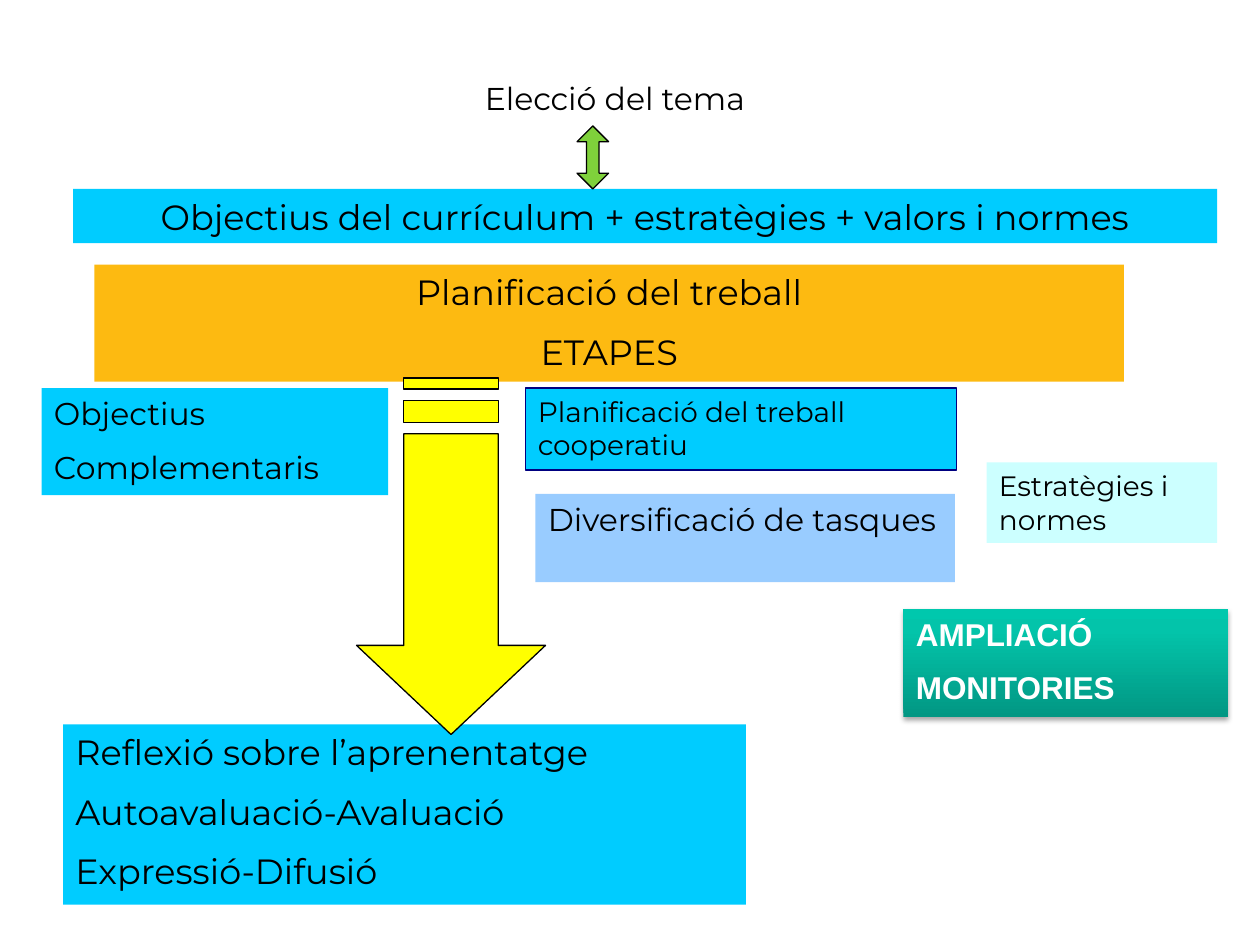
from copy import deepcopy

from lxml.etree import SubElement
from pptx import Presentation
from pptx.dml.color import RGBColor
from pptx.enum.shapes import MSO_SHAPE as Shape
from pptx.enum.text import MSO_ANCHOR as Anchor, PP_ALIGN as Align
from pptx.oxml.ns import qn
from pptx.util import Inches, Pt

BLACK, WHITE, CYAN, YELLOW = "000000", "FFFFFF", "00CCFF", "FFFF00"
MAIN_FONT, ACCENT_FONT = "Montserrat", "Arial"

# lines, (left, top, width, height), fill, size, align, outline
BOXES = [
    (["Elecció del tema"], (2.42, 0.58, 4.92, 0.4), None, 18, Align.CENTER, None),
    (["Objectius del currículum + estratègies + valors i normes"],
     (0.58, 1.5, 9.08, 0.43), CYAN, 20, Align.CENTER, None),
    (["Planificació del treball", "ETAPES"],
     (0.75, 2.1, 8.17, 0.93), "FDBA11", 20, Align.CENTER, None),
    (["Objectius", "Complementaris"],
     (0.33, 3.08, 2.75, 0.85), CYAN, 18, Align.LEFT, None),
    (["Planificació del treball cooperatiu"],
     (4.17, 3.08, 3.42, 0.65), CYAN, 16, Align.LEFT, "000080"),
    (["Diversificació de tasques"],
     (4.25, 3.92, 3.33, 0.7), "99CCFF", 18, Align.LEFT, None),
    (["Estratègies i normes"],
     (7.83, 3.67, 1.83, 0.64), "CCFFFF", 16, Align.LEFT, None),
    (["Reflexió sobre l’aprenentatge", "Autoavaluació-Avaluació", "Expressió-Difusió"],
     (0.5, 5.75, 5.42, 1.43), CYAN, 20, Align.LEFT, None),
]
EXTENSION_LINES = ["AMPLIACIÓ", "MONITORIES"]
EXTENSION_AREA = (7.17, 4.83, 2.58, 0.86)
EXTENSION_STOPS = [(0, "029783"), (0.8, "03C4AA"), (1, "00C8AD")]

STAGES_ARROW = (2.83, 3, 1.5, 2.83)
CHOICE_ARROW = (4.58, 1, 0.25, 0.5)


def rgb(color):
    return RGBColor.from_string(color)


def paint(shape, fill, outline=None):
    shape.shadow.inherit = False
    if fill:
        shape.fill.solid()
        shape.fill.fore_color.rgb = rgb(fill)
    else:
        shape.fill.background()
    if outline:
        shape.line.color.rgb = rgb(outline)
        shape.line.width = Pt(0.75)
    else:
        shape.line.fill.background()


def write(shape, lines, size, align, font=MAIN_FONT, color=BLACK, bold=False):
    frame = shape.text_frame
    frame.word_wrap = True
    frame.vertical_anchor = Anchor.TOP
    for i, line in enumerate(lines):
        paragraph = frame.paragraphs[0] if i == 0 else frame.add_paragraph()
        paragraph.text = line
        paragraph.alignment = align
        if i:
            paragraph.space_before = Pt(size / 2)
        paragraph.font.name = font
        paragraph.font.size = Pt(size)
        paragraph.font.bold = bold
        paragraph.font.color.rgb = rgb(color)


def add_shape(shapes, kind, area):
    return shapes.add_shape(kind, *map(Inches, area))


def shade(shape, stops):
    """Fill from bottom to top with any number of gradient stops."""
    shape.fill.gradient()
    shape.fill.gradient_angle = 90
    gs_list = shape._element.spPr.find(".//" + qn("a:gsLst"))
    while len(gs_list) < len(stops):
        gs_list.append(deepcopy(gs_list[-1]))
    for stop, (position, color) in zip(shape.fill.gradient_stops, stops):
        stop.position = position
        stop.color.rgb = rgb(color)


def drop_shadow(shape):
    effects = shape._element.spPr.find(qn("a:effectLst"))
    shadow = SubElement(effects, qn("a:outerShdw"), blurRad=str(Pt(3.1)),
                        dist=str(Pt(1.8)), dir="5400000", rotWithShape="0")
    color = SubElement(shadow, qn("a:srgbClr"), val=BLACK)
    SubElement(color, qn("a:alpha"), val="35000")


def add_striped_arrow(shapes, area):
    """Down arrow with two stripes above its shaft, in 32nds of its height."""
    left, top, width, height = map(Inches, area)
    shaft_left, middle, shaft_right = (left + width * k / 4 for k in (1, 2, 3))
    right, bottom = left + width, top + height
    stripe_1, end_1, stripe_2, end_2, shaft_top, head = (
        top + height * k / 32 for k in (0, 1, 2, 4, 5, 24))

    def stripe(start, end):
        return [(shaft_right, start), (shaft_left, start),
                (shaft_left, end), (shaft_right, end)]

    contours = [
        [(right, head), (shaft_right, head), (shaft_right, shaft_top),
         (shaft_left, shaft_top), (shaft_left, head), (left, head), (middle, bottom)],
        stripe(stripe_2, end_2),
        stripe(stripe_1, end_1),
    ]
    builder = shapes.build_freeform(*contours[0][0])
    for i, contour in enumerate(contours):
        if i:
            builder.move_to(*contour[0])
        builder.add_line_segments(contour[1:], close=True)
    return builder.convert_to_shape()


def main():
    deck = Presentation()
    deck.slide_width, deck.slide_height = Inches(10), Inches(7.5)
    shapes = deck.slides.add_slide(deck.slide_layouts[6]).shapes

    for lines, area, fill, size, align, outline in BOXES:
        box = add_shape(shapes, Shape.RECTANGLE, area)
        paint(box, fill, outline)
        write(box, lines, size, align)

    extension = add_shape(shapes, Shape.RECTANGLE, EXTENSION_AREA)
    paint(extension, None)
    shade(extension, EXTENSION_STOPS)
    drop_shadow(extension)
    write(extension, EXTENSION_LINES, 18, Align.LEFT, ACCENT_FONT, WHITE, True)

    paint(add_striped_arrow(shapes, STAGES_ARROW), YELLOW, BLACK)

    choice_arrow = add_shape(shapes, Shape.UP_DOWN_ARROW, CHOICE_ARROW)
    choice_arrow.adjustments[0] = 0.5
    choice_arrow.adjustments[1] = 0.4
    paint(choice_arrow, "7FD13B", BLACK)

    deck.save("out.pptx")


if __name__ == "__main__":
    main()
